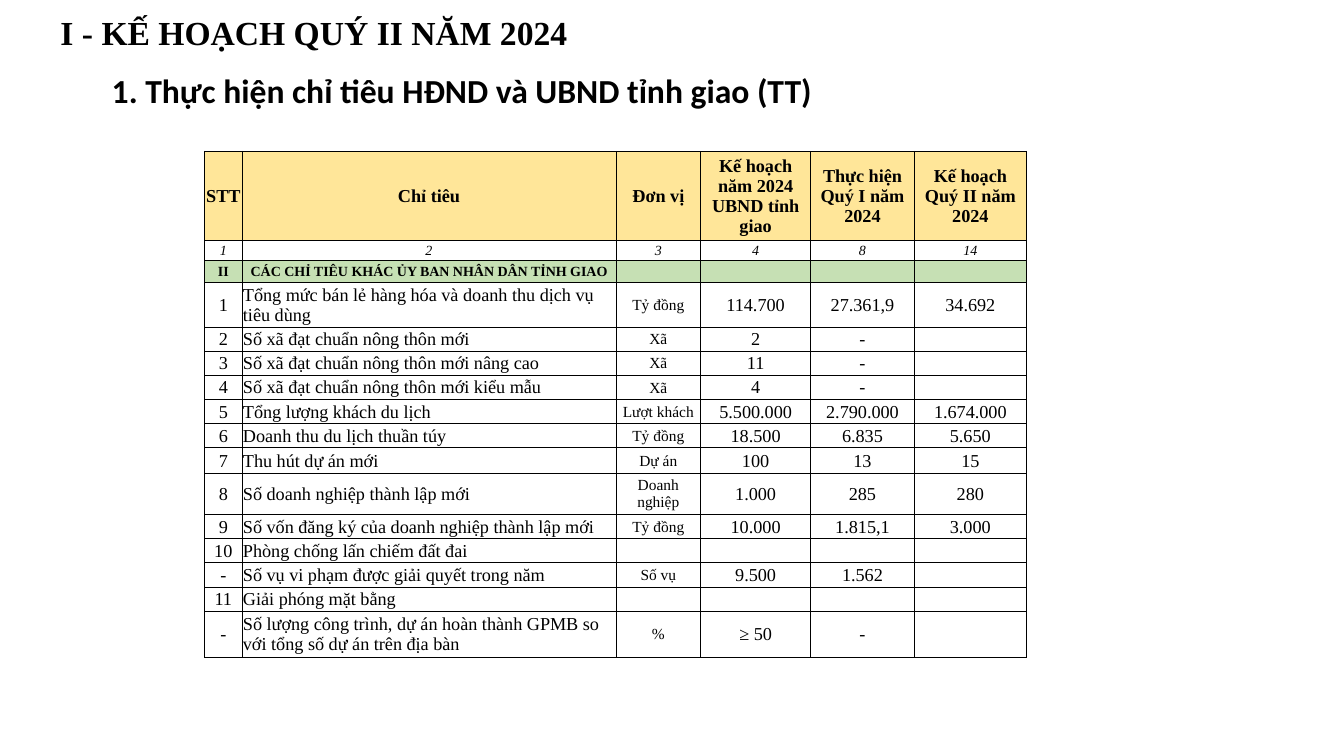
from lxml.etree import SubElement
from pptx import Presentation
from pptx.dml.color import RGBColor
from pptx.enum.text import MSO_ANCHOR as Anchor, MSO_AUTO_SIZE as AutoSize, PP_ALIGN as Align
from pptx.oxml.ns import qn
from pptx.util import Pt

PX = 9144
SERIF, SANS = "Times New Roman", "Calibri"
COLORS = {"ink": "000000", "header": "FFE699", "section": "C6E0B4"}

COLUMN_WIDTHS = [37, 371, 84, 109, 103, 111]
ROW_HEIGHTS = [88, 20, 22, 44] + [24] * 5 + [25, 41] + [24] * 4 + [46]
INDICATOR_COLUMN, UNIT_COLUMN = 1, 2

ROWS = [
    ["STT", "Chỉ tiêu", "Đơn vị", "Kế hoạch năm 2024 UBND tỉnh giao",
     "Thực hiện Quý I năm 2024", "Kế hoạch Quý II năm 2024"],
    ["1", "2", "3", "4", "8", "14"],
    ["II", "CÁC CHỈ TIÊU KHÁC ỦY BAN NHÂN DÂN TỈNH GIAO", "", "", "", ""],
    ["1", "Tổng mức bán lẻ hàng hóa và doanh thu dịch vụ tiêu dùng", "Tỷ đồng", "114.700", "27.361,9", "34.692"],
    ["2", "Số xã đạt chuẩn nông thôn mới", "Xã", "2", "-", ""],
    ["3", "Số xã đạt chuẩn nông thôn mới nâng cao", "Xã", "11", "-", ""],
    ["4", "Số xã đạt chuẩn nông thôn mới kiểu mẫu", "Xã", "4", "-", ""],
    ["5", "Tổng lượng khách du lịch", "Lượt khách", "5.500.000", "2.790.000", "1.674.000"],
    ["6", "Doanh thu du lịch thuần túy", "Tỷ đồng", "18.500", "6.835", "5.650"],
    ["7", "Thu hút dự án mới", "Dự án", "100", "13", "15"],
    ["8", "Số doanh nghiệp thành lập mới", "Doanh nghiệp", "1.000", "285", "280"],
    ["9", "Số vốn đăng ký của doanh nghiệp thành lập mới", "Tỷ đồng", "10.000", "1.815,1", "3.000"],
    ["10", "Phòng chống lấn chiếm đất đai", "", "", "", ""],
    ["-", "Số vụ vi phạm được giải quyết trong năm", "Số vụ", "9.500", "1.562", ""],
    ["11", "Giải phóng mặt bằng", "", "", "", ""],
    ["-", "Số lượng công trình, dự án hoàn thành GPMB so với tổng số dự án trên địa bàn", "%", "≥ 50", "-", ""],
]

SPECIAL_ROWS = {
    0: {"size": 13, "bold": True, "fill": "header"},
    1: {"size": 10, "italic": True},
    2: {"size": 10, "bold": True, "fill": "section"},
}


def format_span(span, size, name, bold=False, italic=False):
    font = span.font
    font.size, font.name, font.bold, font.italic = Pt(size), name, bold, italic
    font.color.rgb = RGBColor.from_string(COLORS["ink"])


def fill_heading(shape, box, text, name):
    shape.left, shape.top, shape.width, shape.height = [length * PX for length in box]
    frame = shape.text_frame
    frame.text = text
    frame.word_wrap = True
    frame.auto_size = AutoSize.SHAPE_TO_FIT_TEXT
    frame.vertical_anchor = Anchor.TOP
    para = frame.paragraphs[0]
    para.alignment = Align.LEFT
    format_span(para.runs[0], 24, name, bold=True)


def draw_borders(cell):
    properties = cell._tc.get_or_add_tcPr()
    for side in ("a:lnL", "a:lnR", "a:lnT", "a:lnB"):
        line = SubElement(properties, qn(side), w=str(Pt(0.5)))
        SubElement(SubElement(line, qn("a:solidFill")), qn("a:srgbClr"), val=COLORS["ink"])


def fill_cell(cell, text, column, size=13, bold=False, italic=False, fill=None, align=Align.CENTER):
    draw_borders(cell)
    if fill:
        cell.fill.solid()
        cell.fill.fore_color.rgb = RGBColor.from_string(COLORS[fill])
    else:
        cell.fill.background()
    cell.margin_left = cell.margin_top = cell.margin_right = PX
    cell.margin_bottom = 0
    cell.vertical_anchor = Anchor.MIDDLE
    para = cell.text_frame.paragraphs[0]
    para.text = text
    para.alignment = align
    for span in para.runs:
        format_span(span, size, SERIF, bold, italic)
    if not text:
        SubElement(para._p, qn("a:endParaRPr"), sz=str(size * 100))


def body_style(column):
    return {
        "size": 11 if column == UNIT_COLUMN else 13,
        "align": Align.LEFT if column == INDICATOR_COLUMN else Align.CENTER,
    }


def add_indicator_table(page, left, top):
    box = [left, top, sum(COLUMN_WIDTHS), sum(ROW_HEIGHTS)]
    frame = page.shapes.add_table(len(ROWS), len(COLUMN_WIDTHS), *[length * PX for length in box])
    table = frame.table
    table.first_row = table.horz_banding = False
    for column, width in zip(table.columns, COLUMN_WIDTHS):
        column.width = width * PX
    for row, height in zip(table.rows, ROW_HEIGHTS):
        row.height = height * PX
    for row_index, texts in enumerate(ROWS):
        for column_index, text in enumerate(texts):
            style = SPECIAL_ROWS.get(row_index) or body_style(column_index)
            fill_cell(table.cell(row_index, column_index), text, column_index, **style)


def build_plan_page(deck):
    page = deck.slides.add_slide(deck.slide_layouts.get_by_name("Title Only"))
    fill_heading(page.shapes.title, (50, 7, 1259, 50), "I - KẾ HOẠCH QUÝ II NĂM 2024", SERIF)
    subtitle = page.shapes.add_textbox(0, 0, PX, PX)
    fill_heading(subtitle, (101, 64, 818, 50), "1. Thực hiện chỉ tiêu HĐND và UBND tỉnh giao (TT)", SANS)
    add_indicator_table(page, 203, 150)


def main():
    deck = Presentation()
    deck.slide_width, deck.slide_height = 1333 * PX, 750 * PX
    build_plan_page(deck)
    deck.save("out.pptx")


if __name__ == "__main__":
    main()
